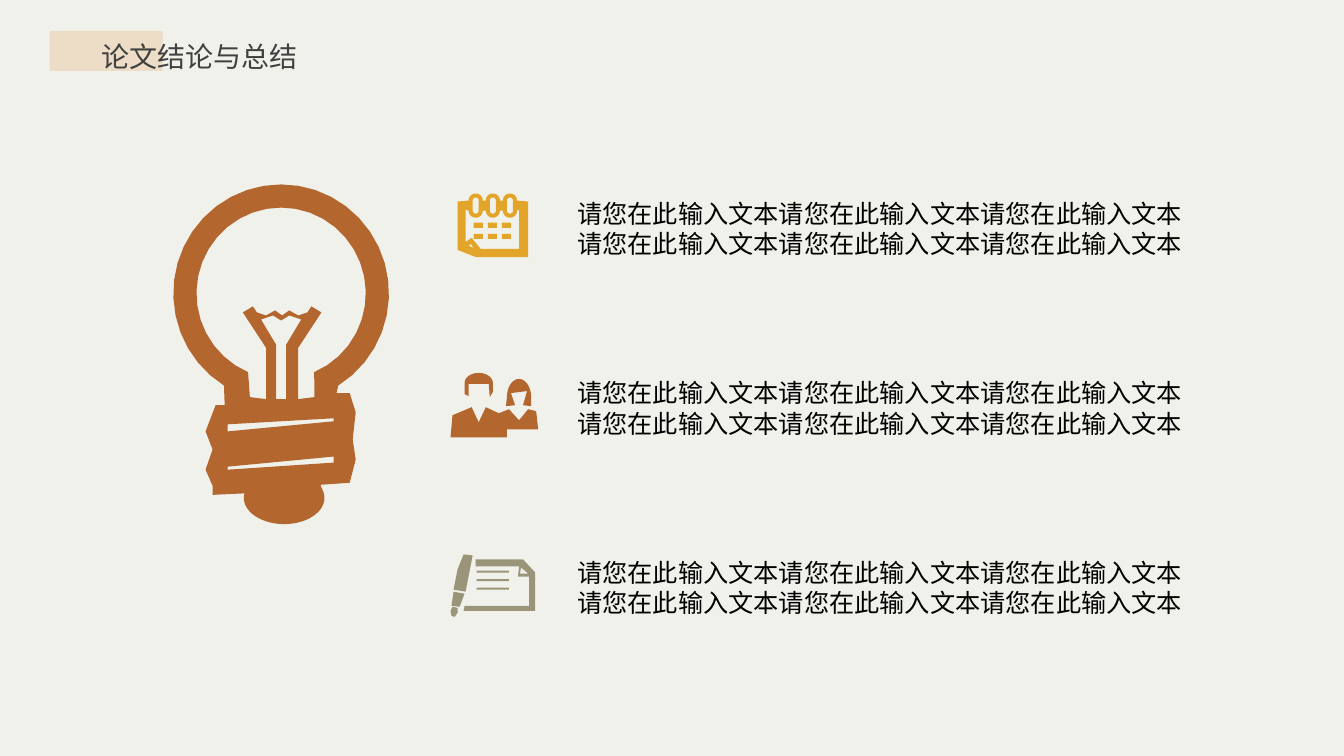
import math

import pptx
import pptx.dml.color
import pptx.enum.shapes
import pptx.enum.text
import pptx.oxml.ns
import pptx.util
from lxml import etree

# Content
FONT = "Noto Sans CJK SC"
BACKGROUND, ACCENT, TITLE_COLOR, BODY_COLOR = "F1F1EB", "EDDDC6", "404040", "000000"
RUST, OLIVE, GOLD = "B3672E", "9A9479", "E2A52A"
TITLE = "论文结论与总结"
BODY = "请您在此输入文本" * 6
BODY_COUNT = 3


# Outline rules, in hundredths of an inch
def arc(x, y, width, height, start, end, pieces=32):
    """Points on an ellipse; degrees run clockwise from the right."""
    angles = [math.radians(start + (end - start) * piece / pieces) for piece in range(pieces + 1)]
    return [(x + width * math.cos(angle), y + height * math.sin(angle)) for angle in angles]


def box(left, top, width, height):
    right, bottom = left + width, top + height
    return [(left, top), (right, top), (right, bottom), (left, bottom)]


def mirrored(half, axis):
    return half + [(2 * axis - x, y) for x, y in reversed(half)]


# Light bulb
GLASS_X, GLASS_Y = 279, 291
STEM = [(312, 394), (296, 396), (296, 345), (319, 310), (309, 304), (305, 310),
        (296, 313), (287, 308), (280, 313)]
BULB = [
    arc(GLASS_X, GLASS_Y, 107, 108, 122, 418)
    + [(334, 390), (347, 390), (353, 409), (350, 436), (353, 456), (347, 479), (318, 481)]
    + arc(282, 494, 40, 26, -20, 190)
    + [(211, 491), (211, 482), (204, 466), (211, 446), (204, 428), (214, 402), (223, 402)],
    arc(GLASS_X, GLASS_Y, 84, 85, 113, 427) + mirrored(STEM, 280),
    mirrored([(284, 396), (284, 342), (299, 317), (287, 313), (279, 318)], GLASS_X),
    [(331, 415), (226, 421), (226, 428), (331, 418)],
    [(331, 453), (226, 463), (226, 466), (331, 459)],
]

# Man and woman
PEOPLE = [
    [(447, 434), (449, 412), (468, 404), (475, 419), (482, 404), (495, 410), (505, 406),
     (515, 417), (524, 406), (532, 408), (534, 426), (503, 426), (503, 434)],
    arc(475, 380, 14, 10, 180, 360)
    + [(489, 389), (486, 394), (485, 381), (465, 381), (465, 393), (461, 391)],
    arc(515, 394, 12, 18, 180, 360)
    + [(527, 403), (519, 402), (523, 388), (507, 390), (511, 402), (502, 403)],
]

# Pen and letter
LETTER = [
    [(450, 585), (454, 565), (460, 550), (469, 551), (462, 587)],
    [(450, 587), (461, 589), (456, 602), (448, 601)],
    [(449, 602), (454, 603), (454, 608), (451, 612), (448, 611), (447, 606)],
    [(461, 601), (460, 606), (531, 606), (531, 568), (519, 555), (472, 555),
     (472, 562), (515, 562), (514, 572), (525, 572), (525, 601)],
    [(524, 569), (516, 569), (517, 563)],
]
LETTER += [box(473, 566 + 8.5 * line, 32, 2) for line in range(3)]

# Calendar: three binder rings over a sheet with two rows of days
RINGS = [472, 489, 506]
RING_TOP, RING_BOTTOM = 199, 209


def ring_ends(y, radius, start, centers):
    return [point for x in centers for point in arc(x, y, radius, radius, start, start + 180)]


CALENDAR = [
    [(454, 200)] + ring_ends(RING_TOP, 7, 180, RINGS)
    + [(524, 200), (524, 255), (472, 255), (454, 248)],
    [(462, 240), (468, 236), (477, 247), (515, 247), (515, 208)]
    + ring_ends(RING_BOTTOM, 7, 0, RINGS[::-1]) + [(462, 208)],
    [(470, 246), (467, 242), (465, 244)],
]
CALENDAR += [box(470 + 14 * day, 221 + 11 * week, 9, 5) for week in range(2) for day in range(3)]
CALENDAR += [ring_ends(RING_TOP, 3, 180, [x]) + ring_ends(RING_BOTTOM, 3, 0, [x]) for x in RINGS]

ICONS = [(BULB, RUST), (PEOPLE, RUST), (LETTER, OLIVE), (CALENDAR, GOLD)]


# Helpers
def paint(fill, color):
    fill.solid()
    fill.fore_color.rgb = pptx.dml.color.RGBColor.from_string(color)


def finish(shape, color):
    shape.shadow.inherit = False
    paint(shape.fill, color)
    shape.line.fill.background()


def add_icon(slide, outlines, color):
    contours = [[tuple(pptx.util.Cm(value * 2.54 / 100) for value in point) for point in outline]
                for outline in outlines]
    builder = slide.shapes.build_freeform(*contours[0][0], scale=1.0)
    for number, points in enumerate(contours):
        if number:
            builder.move_to(*points[0])
        builder.add_line_segments(points[1:], close=True)
    finish(builder.convert_to_shape(), color)


def add_text(slide, place, text, size, color, alignment, spacing):
    frame = slide.shapes.add_textbox(*map(pptx.util.Cm, place)).text_frame
    frame.word_wrap = True
    paragraph = frame.paragraphs[0]
    paragraph.alignment = alignment
    paragraph.line_spacing = spacing
    run = paragraph.add_run()
    run.text = text
    run.font.size = pptx.util.Pt(size)
    run.font.name = FONT
    paint(run.font.fill, color)
    east_asian = etree.SubElement(run.font._element, pptx.oxml.ns.qn("a:ea"))
    east_asian.set("typeface", FONT)


def main():
    presentation = pptx.Presentation()
    presentation.slide_width = pptx.util.Cm(33.87)
    presentation.slide_height = pptx.util.Cm(19.05)
    slide = presentation.slides.add_slide(presentation.slide_layouts[6])
    paint(slide.background.fill, BACKGROUND)
    align = pptx.enum.text.PP_ALIGN

    # Title over its accent block
    accent = slide.shapes.add_shape(pptx.enum.shapes.MSO_SHAPE.RECTANGLE,
                                    *map(pptx.util.Cm, (1.25, 0.78, 2.85, 1.01)))
    finish(accent, ACCENT)
    add_text(slide, (2.31, 0.61, 8.89, 1.4), TITLE, 20, TITLE_COLOR, align.JUSTIFY, 1.3)

    # Icons
    for outlines, color in ICONS:
        add_icon(slide, outlines, color)

    # Conclusions
    for row in range(BODY_COUNT):
        add_text(slide, (14.22, 4.87 + 4.52 * row, 15.9, 3.1), BODY, 18, BODY_COLOR, align.CENTER, 1.0)

    presentation.save("out.pptx")


if __name__ == "__main__":
    main()
